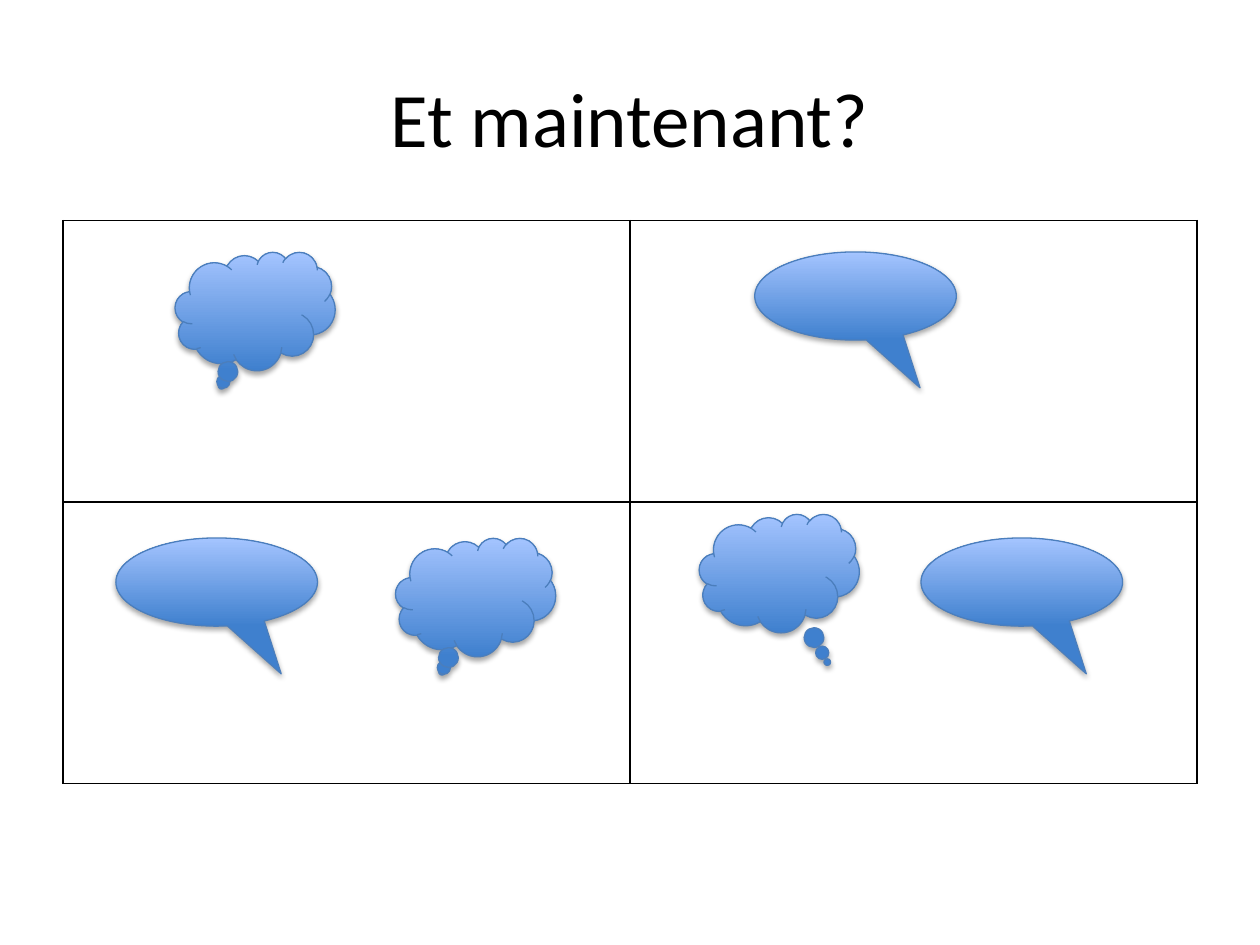
from lxml.etree import SubElement
from pptx import Presentation
from pptx.dml.color import RGBColor
from pptx.enum.shapes import MSO_SHAPE
from pptx.enum.text import MSO_ANCHOR, PP_ALIGN
from pptx.oxml import parse_xml
from pptx.oxml.ns import nsdecls, qn
from pptx.util import Inches, Pt

BLACK = RGBColor(0x00, 0x00, 0x00)
DARK = RGBColor(0x3F, 0x80, 0xCE)
LIGHT = RGBColor(0xA4, 0xC4, 0xFF)
EDGE = RGBColor(0x4B, 0x7E, 0xBC)


def put_text(frame, text, size=18, font="Calibri", color=BLACK,
             align=PP_ALIGN.LEFT, anchor=MSO_ANCHOR.TOP):
    frame.word_wrap = True
    frame.vertical_anchor = anchor
    para = frame.paragraphs[0]
    para.alignment = align
    run = para.add_run()
    run.text = text
    run.font.size = Pt(size)
    run.font.name = font
    run.font.color.rgb = color


class Board:
    """Holds the style and the current slide, and draws its elements."""

    def __init__(self, deck):
        self.slide = deck.slides.add_slide(deck.slide_layouts[5])
        self.stops = (DARK, LIGHT)
        self.edge = EDGE
        self.rule = BLACK

    def title(self, text, x, y, w, h):
        shape = self.slide.shapes.title
        shape.left, shape.top = Inches(x), Inches(y)
        shape.width, shape.height = Inches(w), Inches(h)
        put_text(shape.text_frame, text, size=44,
                 align=PP_ALIGN.CENTER, anchor=MSO_ANCHOR.MIDDLE)

    def grid(self, rows, cols, x, y, w, h):
        table = self.slide.shapes.add_table(
            rows, cols, Inches(x), Inches(y), Inches(w), Inches(h)).table
        table.first_row = table.horz_banding = False
        for cell in table.iter_cells():
            self.border(cell)
            cell.fill.background()

    def border(self, cell):
        props = cell._tc.get_or_add_tcPr()
        for side in ("lnL", "lnR", "lnT", "lnB"):
            line = SubElement(props, qn(f"a:{side}"), w=str(Pt(1)))
            fill = SubElement(line, qn("a:solidFill"))
            SubElement(fill, qn("a:srgbClr"), val=str(self.rule))

    def bubble(self, kind, x, y, w, h, tail):
        shape = self.slide.shapes.add_shape(
            kind, Inches(x), Inches(y), Inches(w), Inches(h))
        for spot, value in enumerate(tail):
            shape.adjustments[spot] = value
        shape.fill.gradient()
        shape.fill.gradient_angle = 90
        for stop, color in zip(shape.fill.gradient_stops, self.stops):
            stop.color.rgb = color
        shape.line.color.rgb = self.edge
        shape.line.width = Pt(0.75)
        self.shade(shape)

    def shade(self, shape):
        shape.shadow.inherit = False
        effects = shape._element.spPr.find(qn("a:effectLst"))
        effects.append(parse_xml(
            f'<a:outerShdw {nsdecls("a")} blurRad="{Pt(3.1)}" dist="{Pt(1.8)}" '
            'dir="5400000" rotWithShape="0"><a:srgbClr val="000000">'
            '<a:alpha val="35000"/></a:srgbClr></a:outerShdw>'))

    def thought(self, x, y, tail=(-0.21, 0.63)):
        self.bubble(MSO_SHAPE.CLOUD_CALLOUT, x, y, 1.27, 0.94, tail)

    def speech(self, x, y, tail=(0.32, 1.04)):
        self.bubble(MSO_SHAPE.OVAL_CALLOUT, x, y, 1.6, 0.7, tail)


def main():
    deck = Presentation()
    deck.slide_width, deck.slide_height = Inches(10), Inches(7.5)
    board = Board(deck)
    board.title("Et maintenant?", 0.5, 0.3, 9, 1.25)
    board.grid(2, 2, 0.5, 1.75, 9, 4.47)
    board.thought(1.39, 2)
    board.speech(5.99, 2)
    board.speech(0.92, 4.27)
    board.thought(3.14, 4.27)
    board.thought(5.55, 4.08, tail=(0.3, 0.75))
    board.speech(7.31, 4.27)
    deck.save("out.pptx")


if __name__ == "__main__":
    main()
